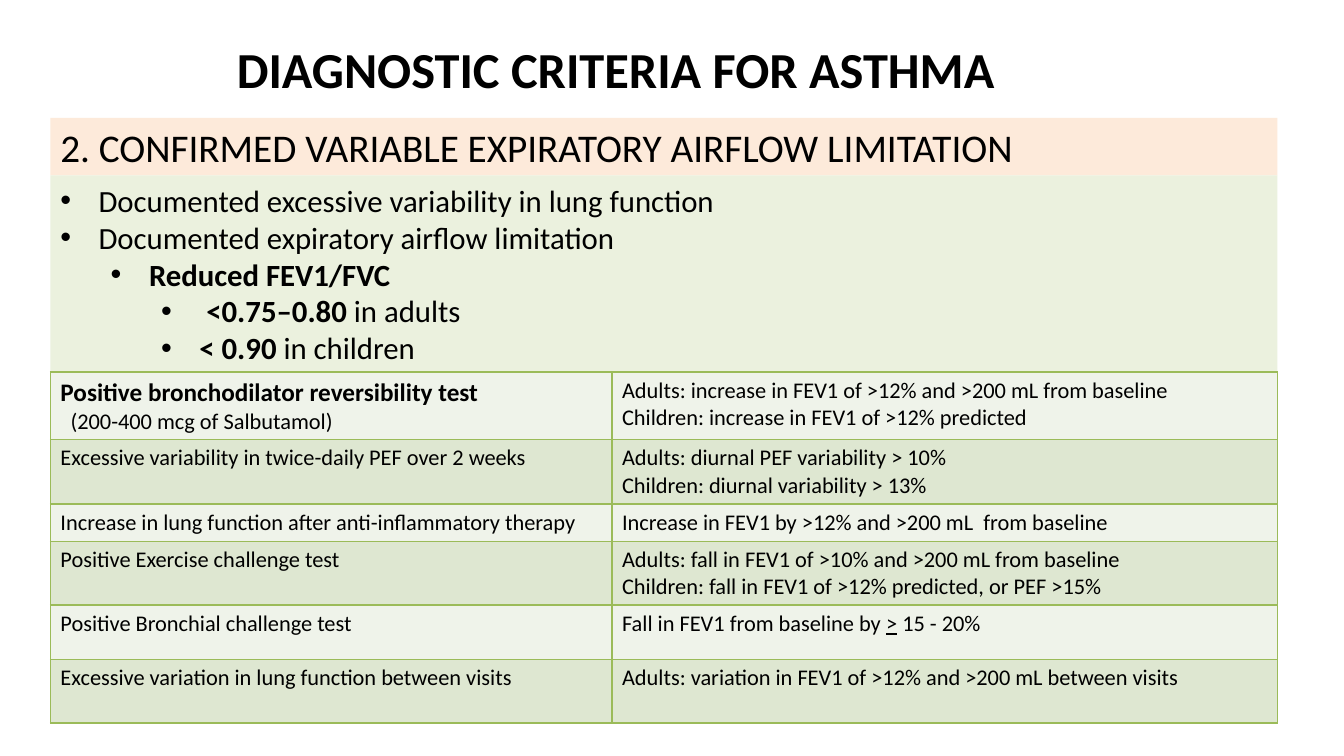
from dataclasses import dataclass
from itertools import chain

from lxml.etree import SubElement
from pptx import Presentation
from pptx.dml.color import RGBColor
from pptx.enum.shapes import MSO_SHAPE
from pptx.oxml.ns import qn
from pptx.slide import Slide
from pptx.table import _Cell
from pptx.text.text import TextFrame
from pptx.util import Emu, Pt

EMU_PER_PX = 9144  # 100 px to the inch


@dataclass(frozen=True)
class Theme:
    font: str = "Calibri"
    ink: str = "000000"
    heading_fill: str = "FDEADA"
    criteria_fill: str = "EBF1DE"
    bands: tuple[str, str] = ("EFF3EA", "DEE7D1")
    border: str = "9BBB59"
    title_size: int = 36
    heading_size: int = 28
    criteria_size: int = 22
    lead_size: int = 18
    cell_size: int = 16


@dataclass(frozen=True)
class Span:
    text: str
    bold: bool = False
    underline: bool = False


@dataclass(frozen=True)
class Para:
    spans: tuple[Span, ...]
    size: int
    level: int = 0
    margin: int = 0
    bullet: bool = False


@dataclass(frozen=True)
class Box:
    left: int
    top: int
    width: int
    height: int
    paras: tuple[Para, ...]
    fill: str | None = None


@dataclass(frozen=True)
class Row:
    height: int
    cells: tuple[tuple[Para, ...], tuple[Para, ...]]


THEME = Theme()


def px(length: int) -> Emu:
    return Emu(length * EMU_PER_PX)


def write(frame: TextFrame, paras: tuple[Para, ...]) -> None:
    frame.word_wrap = True
    for index, item in enumerate(paras):
        para = frame.paragraphs[0] if index == 0 else frame.add_paragraph()
        para.level = item.level
        properties = para._p.get_or_add_pPr()
        properties.set("algn", "l")
        properties.set("marL", str(px(item.margin)))
        properties.set("indent", str(px(-38 if item.bullet else 0)))
        if item.bullet:
            SubElement(properties, qn("a:buFont"), typeface="Arial")
            SubElement(properties, qn("a:buChar"), char="•")
        for span in item.spans:
            run = para.add_run()
            run.text = span.text
            formats = {"name": THEME.font, "size": Pt(item.size),
                       "bold": span.bold, "underline": span.underline}
            for name, value in formats.items():
                setattr(run.font, name, value)
            run.font.color.rgb = RGBColor.from_string(THEME.ink)


def add_box(page: Slide, box: Box) -> None:
    place = [px(n) for n in (box.left, box.top, box.width, box.height)]
    if box.fill is None:
        shape = page.shapes.add_textbox(*place)
    else:
        shape = page.shapes.add_shape(MSO_SHAPE.RECTANGLE, *place)
        shape.shadow.inherit = False
        shape.fill.solid()
        shape.fill.fore_color.rgb = RGBColor.from_string(box.fill)
        shape.line.fill.background()
    write(shape.text_frame, box.paras)


def style_cell(cell: _Cell, fill: str) -> None:
    properties = cell._tc.get_or_add_tcPr()
    for side in ("lnL", "lnR", "lnT", "lnB"):
        line = SubElement(properties, qn(f"a:{side}"), w=str(Pt(1)))
        solid = SubElement(line, qn("a:solidFill"))
        SubElement(solid, qn("a:srgbClr"), val=THEME.border)
    cell.fill.solid()
    cell.fill.fore_color.rgb = RGBColor.from_string(fill)


def add_tests(page: Slide, left: int, top: int, widths: tuple[int, ...],
              rows: tuple[Row, ...]) -> None:
    height = sum(row.height for row in rows)
    table = page.shapes.add_table(len(rows), len(widths), px(left), px(top),
                                  px(sum(widths)), px(height)).table
    for name in ("first_row", "horz_banding"):
        setattr(table, name, False)
    for column, width in zip(table.columns, widths):
        column.width = px(width)
    for index, row in enumerate(rows):
        table.rows[index].height = px(row.height)
        for cell, paras in zip(table.rows[index].cells, row.cells):
            style_cell(cell, THEME.bands[index % 2])
            write(cell.text_frame, paras)


def lines(*texts: str) -> tuple[Para, ...]:
    return tuple(Para((Span(text),), THEME.cell_size) for text in texts)


def criterion(level: int, *spans: Span) -> Para:
    return Para(spans, THEME.criteria_size, level, 38 + 50 * level, True)


# Title, heading and criteria
BOXES = (
    Box(50, 117, 1217, 57, (Para((Span(
        "2. CONFIRMED VARIABLE EXPIRATORY AIRFLOW LIMITATION"),),
        THEME.heading_size),), THEME.heading_fill),
    Box(50, 174, 1217, 195, (
        criterion(0, Span("Documented excessive variability in lung function")),
        criterion(0, Span("Documented expiratory airflow limitation")),
        criterion(1, Span("Reduced FEV1/FVC", bold=True)),
        criterion(2, Span(" "), Span("<0.75–0.80 ", bold=True), Span("in adults")),
        criterion(2, Span("< 0.90 ", bold=True), Span("in children")),
    ), THEME.criteria_fill),
    Box(225, 33, 842, 71, (Para((Span(
        "DIAGNOSTIC CRITERIA FOR ASTHMA", bold=True),), THEME.title_size),)),
)

# Tests and their thresholds
REVERSIBILITY = (
    Para((Span("Positive bronchodilator reversibility test", bold=True),),
         THEME.lead_size),
    Para((Span("(200-400 mcg of Salbutamol)"),), THEME.cell_size, margin=10),
)
BRONCHIAL_FALL = (Para((Span("Fall in FEV1 from baseline by "),
                        Span(">", underline=True), Span(" 15 - 20%")),
                       THEME.cell_size),)
ROWS = (
    Row(67, (REVERSIBILITY, lines(
        "Adults: increase in FEV1 of >12% and >200 mL from baseline",
        "Children: increase in FEV1 of >12% predicted"))),
    Row(64, (lines("Excessive variability in twice-daily PEF over 2 weeks"), lines(
        "Adults: diurnal PEF variability > 10%",
        "Children: diurnal variability > 13%"))),
    Row(37, (lines("Increase in lung function after anti-inflammatory therapy"),
             lines("Increase in FEV1 by >12% and >200 mL  from baseline"))),
    Row(63, (lines("Positive Exercise challenge test"), lines(
        "Adults: fall in FEV1 of >10% and >200 mL from baseline",
        "Children: fall in FEV1 of >12% predicted, or PEF >15%"))),
    Row(54, (lines("Positive Bronchial challenge test"), BRONCHIAL_FALL)),
    Row(63, (lines("Excessive variation in lung function between visits"), lines(
        "Adults: variation in FEV1 of >12% and >200 mL between visits"))),
)


def main() -> None:
    deck = Presentation()
    deck.slide_width, deck.slide_height = px(1333), px(750)
    page = deck.slides.add_slide(deck.slide_layouts[6])
    for box in BOXES:
        add_box(page, box)
    add_tests(page, 50, 369, (557, 660), ROWS)
    deck.save("out.pptx")


if __name__ == "__main__":
    main()
